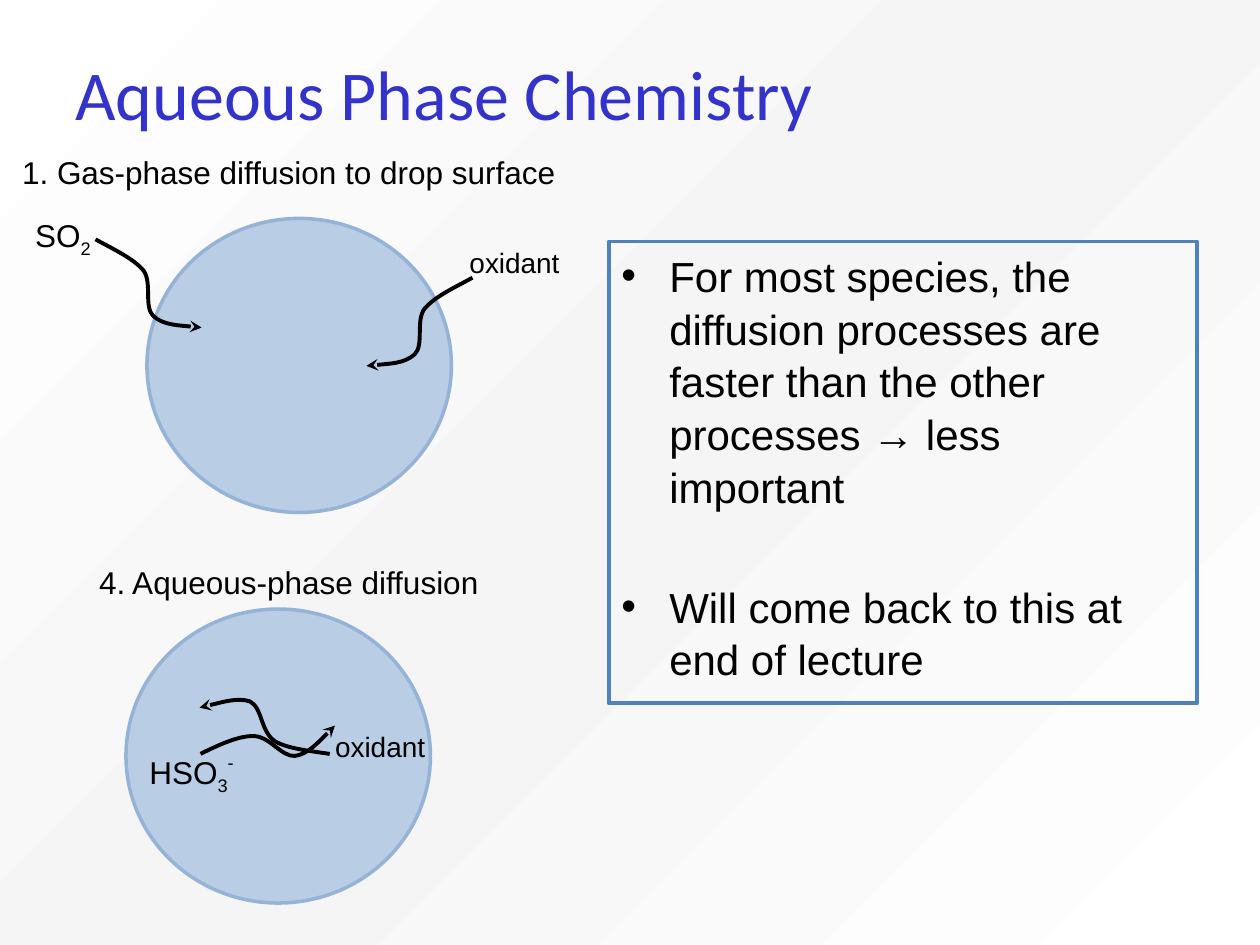
from copy import deepcopy
from typing import NamedTuple

from lxml import etree
from pptx import Presentation, util as u
from pptx.dml.color import RGBColor
from pptx.enum import shapes, text
from pptx.oxml import parse_xml
from pptx.oxml.ns import nsdecls, qn

COLS, ROWS = 120, 90  # square grid cells, twelve to the inch
CELL = u.Inches(10) // COLS
BLACK, TITLE_BLUE, BOX_BLUE = "000000", "3333CC", "4F81BD"
DROP_FILL, DROP_EDGE = "B9CDE5", "95B3D7"


class Area(NamedTuple):
    col: float
    row: float
    cols: float
    rows: float

    def emu(self) -> list[int]:
        return [round(v * CELL) for v in self]


class Label(NamedTuple):
    area: Area
    runs: list[tuple[str, int]]  # wording, baseline shift in percent
    size: int = 18


Point = tuple[float, float]

DROPS = [Area(14, 20.8, 29, 28), Area(12, 58, 29, 28)]
LABELS = [
    Label(Area(-1, 14, 57, 4.8), [("1. Gas-phase diffusion to drop surface", 0)]),
    Label(Area(1, 20, 10, 4.8), [("SO", 0), ("2", -25)]),
    Label(Area(42, 22.8, 14, 4.4), [("oxidant", 0)], 16),
    Label(Area(7, 53, 41, 4.8), [("4. Aqueous-phase diffusion", 0)]),
    Label(Area(12.5, 71, 11.5, 4.8), [("HSO", 0), ("3", -25), ("-", 46)]),
    Label(Area(29.2, 68.9, 14, 4.4), [("oxidant", 0)], 16),
]
# Each path: a start, then two handles and an end for every curve
SO2_PATH: list[Point] = [
    (9.1, 22.8), (10.9, 23.8), (12.7, 24.6), (13.7, 25.8), (14.5, 27),
    (13.7, 29.2), (14.6, 30.1), (15.6, 31), (19.2, 31.2), (19.2, 31.2)]
OXIDANT_PATH = [(54.1 - x, y + 3.65) for x, y in SO2_PATH]  # mirrored
HSO3_PATH: list[Point] = [
    (19.1, 71.8), (20.9, 70.9), (22.7, 70.1), (24.1, 70.1), (25.7, 70.1),
    (26.8, 72.1), (28.1, 72), (29.4, 71.8), (31.9, 69.1), (31.9, 69.1)]
AQUEOUS_OXIDANT_PATH: list[Point] = [
    (31.4, 71.8), (29.4, 71.5), (27.4, 71.3), (26.2, 70.6), (24.8, 69.7),
    (25, 67.4), (23.8, 66.8), (22.6, 66.4), (19, 67.4), (19, 67.4)]
REMARKS = [
    "For most species, the diffusion processes are faster than the other "
    "processes → less important",
    "Will come back to this at end of lecture",
]


def rgb(value: str) -> RGBColor:
    return RGBColor.from_string(value)


def apply(target, formats: dict) -> None:
    for name, value in formats.items():
        setattr(target, name, value)


def outline(shape, color: str, width: float) -> None:
    shape.shadow.inherit = False
    shape.line.color.rgb = rgb(color)
    shape.line.width = u.Pt(width)


def write(paragraph, wording: str, size: int, color: str = BLACK,
          font: str = "Arial", baseline: int = 0) -> None:
    run = paragraph.add_run()
    run.text = wording
    apply(run.font, {"size": u.Pt(size), "name": font})
    run.font.color.rgb = rgb(color)
    if baseline:
        run.font._element.set("baseline", str(baseline * 1000))


def paint_background(slide) -> None:
    fill = slide.background.fill
    fill.gradient()
    fill.gradient_angle = 315
    stops = fill.gradient_stops[0]._gs.getparent()
    stops.insert(1, deepcopy(stops[0]))
    for stop, position, color in zip(
            fill.gradient_stops, (0, 0.5, 1), ("FFFFFF", "F5F5F5", "FFFFFF")):
        stop.position = position
        stop.color.rgb = rgb(color)


def draw_title(slide) -> None:
    frame = slide.shapes.add_textbox(*Area(6, 3.6, 108, 10.4).emu()).text_frame
    apply(frame, {"word_wrap": True, "vertical_anchor": text.MSO_ANCHOR.MIDDLE})
    write(frame.paragraphs[0], "Aqueous Phase Chemistry", 40, TITLE_BLUE, "Calibri")


def draw_remarks(slide) -> None:
    box = slide.shapes.add_shape(
        shapes.MSO_SHAPE.RECTANGLE, *Area(58, 23, 56, 44).emu())
    box.fill.background()
    outline(box, BOX_BLUE, 2.25)
    frame = box.text_frame
    apply(frame, {"word_wrap": True, "vertical_anchor": text.MSO_ANCHOR.TOP})
    for index, remark in enumerate(REMARKS):
        paragraph = frame.add_paragraph() if index else frame.paragraphs[0]
        apply(paragraph, {"alignment": text.PP_ALIGN.LEFT, "line_spacing": 1.05,
                          "space_before": u.Pt(38 * index)})
        props = paragraph._p.get_or_add_pPr()
        indent = u.Inches(0.38)
        props.set("marL", str(indent))
        props.set("indent", str(-indent))
        props.append(parse_xml(f'<a:buFont {nsdecls("a")} typeface="Arial"/>'))
        props.append(parse_xml(f'<a:buChar {nsdecls("a")} char="•"/>'))
        write(paragraph, remark, 24)


def draw_drop(slide, area: Area) -> None:
    drop = slide.shapes.add_shape(shapes.MSO_SHAPE.OVAL, *area.emu())
    drop.fill.solid()
    drop.fill.fore_color.rgb = rgb(DROP_FILL)
    outline(drop, DROP_EDGE, 2)


def draw_label(slide, label: Label) -> None:
    frame = slide.shapes.add_textbox(*label.area.emu()).text_frame
    apply(frame, {"word_wrap": True,
                  "auto_size": text.MSO_AUTO_SIZE.SHAPE_TO_FIT_TEXT})
    paragraph = frame.paragraphs[0]
    paragraph.alignment = text.PP_ALIGN.CENTER
    for wording, baseline in label.runs:
        write(paragraph, wording, label.size, baseline=baseline)


def draw_curved_arrow(slide, points: list[Point]) -> None:
    start, *rest = [(round(x * CELL), round(y * CELL)) for x, y in points]
    builder = slide.shapes.build_freeform(*start)
    builder.add_line_segments(rest, close=False)
    arrow = builder.convert_to_shape()
    arrow.fill.background()
    outline(arrow, BLACK, 2.25)
    # Gather each three straight steps into one cubic curve
    steps = list(arrow._element.iter(qn("a:lnTo")))
    track = steps[0].getparent()
    for first in range(0, len(steps), 3):
        curve = etree.SubElement(track, qn("a:cubicBezTo"))
        for step in steps[first:first + 3]:
            curve.append(step[0])
            track.remove(step)
    arrow.line._get_or_add_ln().append(
        parse_xml(f'<a:tailEnd {nsdecls("a")} type="stealth"/>'))


def main() -> None:
    deck = Presentation()
    apply(deck, {"slide_width": COLS * CELL, "slide_height": ROWS * CELL})
    slide = deck.slides.add_slide(deck.slide_layouts[6])
    paint_background(slide)
    draw_title(slide)
    draw_remarks(slide)
    for drop in DROPS:
        draw_drop(slide, drop)
    for label in LABELS:
        draw_label(slide, label)
    for points in (SO2_PATH, OXIDANT_PATH, HSO3_PATH, AQUEOUS_OXIDANT_PATH):
        draw_curved_arrow(slide, points)
    deck.save("out.pptx")


if __name__ == "__main__":
    main()
